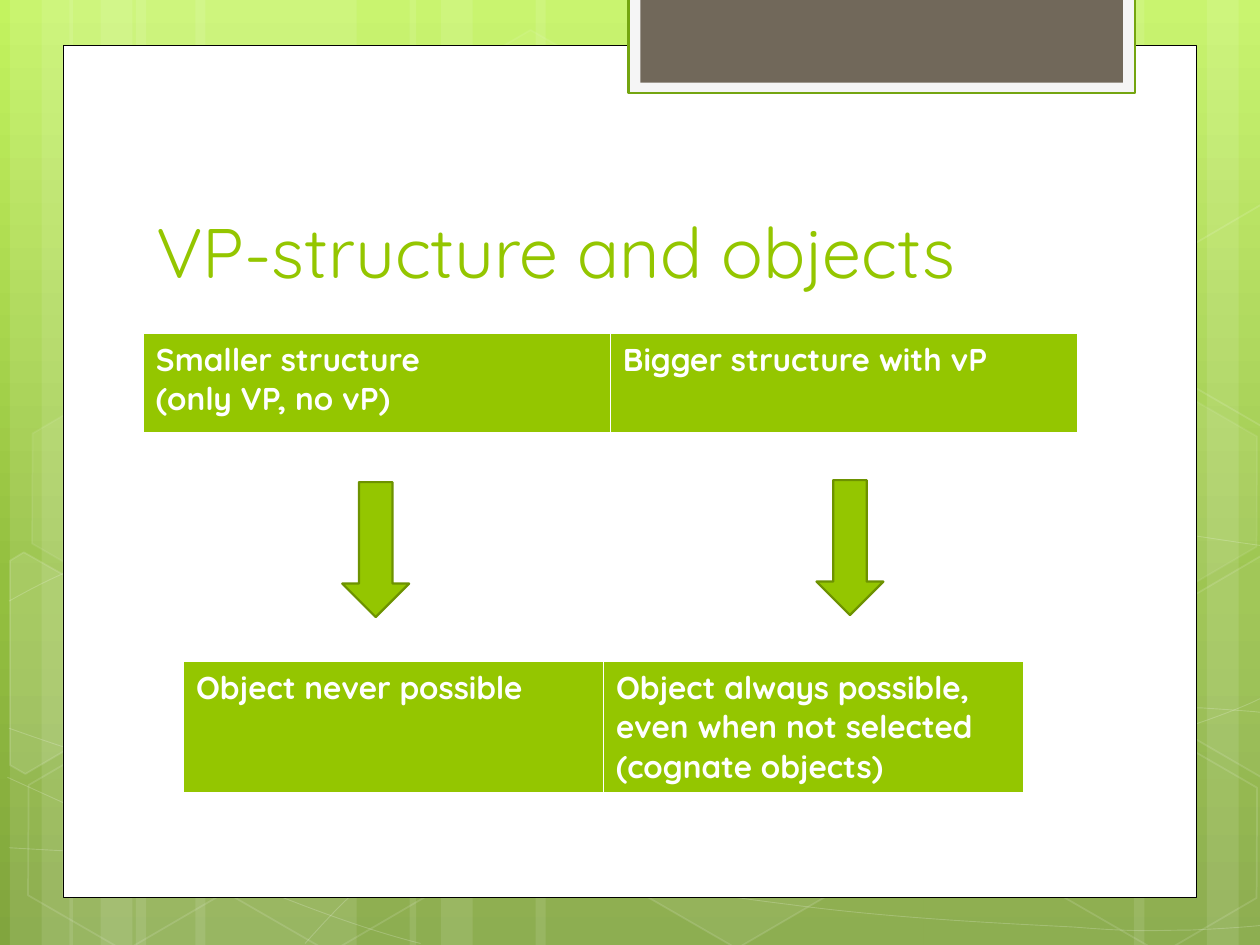
from copy import deepcopy
from dataclasses import dataclass
from math import cos, radians, sin

from lxml.etree import SubElement
from pptx import Presentation
from pptx.dml.color import RGBColor
from pptx.enum.shapes import MSO_SHAPE
from pptx.enum.text import MSO_ANCHOR, MSO_AUTO_SIZE, PP_ALIGN
from pptx.oxml.ns import qn
from pptx.util import Cm, Pt

FONT = "Quicksand"
WHITE = RGBColor(0xFF, 0xFF, 0xFF)
BLACK = RGBColor(0x00, 0x00, 0x00)
GREEN = RGBColor(0x94, 0xC6, 0x00)
DARK_GREEN = RGBColor(0x6D, 0x92, 0x00)
TAB_GREEN = RGBColor(0x74, 0xA5, 0x10)
TAB_LIGHT = RGBColor(0xF5, 0xF5, 0xF5)
TAB_BROWN = RGBColor(0x71, 0x68, 0x5A)
SKY = [(0, RGBColor(0xC3, 0xF3, 0x5F)),
       (0.62, RGBColor(0x93, 0xBF, 0x3F)),
       (1, RGBColor(0x81, 0xA5, 0x3E))]

# Pale decoration, in cm: band widths and the left edges of each cluster
BAND_WIDTHS = (4.45, 1.27, 2.11)
BAND_CLUSTERS = [(2.74, 0.2, 0.84), (3.94, 1.4, 2.03), (18.62, 24.33, 22.86)]
MIDDLE_BANDS = [(10.8, 7.82), (8.26, 1.27), (8.89, 2.11)]

# Each swoosh: start point, then Bezier pieces (two controls and an end)
# or straight pieces (an end only)
SWOOSHES = [
    [(0.18, 17.09), (1.55, 17.17, 2.92, 17.25, 4.83, 17.22),
     (6.73, 17.2, 9.09, 17.15, 11.63, 16.89),
     (14.17, 16.64, 17.78, 16.15, 20.12, 15.67),
     (22.43, 15.19, 24.82, 14.43, 25.58, 13.99)],
    [(0.18, 12.12), (0.91, 11.71, 1.65, 11.33, 3.07, 10.95),
     (4.52, 10.57, 6.58, 10.01, 8.81, 9.83),
     (11.07, 9.65, 13.82, 9.63, 16.61, 9.83),
     (19.41, 10.03, 24.05, 10.82, 25.58, 11.02)],
    [(0.15, 15.67), (3.23, 17.07, 6.27, 18.47, 8.48, 19.02)],
    [(0.18, 14.68), (0.97, 14.96, 1.78, 15.24, 3.25, 15.65),
     (4.72, 16.03, 6.93, 16.66, 9.07, 17.09),
     (11.18, 17.53, 13.84, 17.98, 15.95, 18.24),
     (18.06, 18.52, 20.32, 18.62, 21.67, 18.69),
     (22.99, 18.8, 23.34, 18.75, 24, 18.75),
     (24.66, 18.72, 25.12, 18.69, 25.58, 18.64)],
    [(6.15, 19.02), (6.6, 18.52, 7.06, 18.01, 7.67, 17.55),
     (8.28, 17.09, 9.14, 16.59, 9.86, 16.23),
     (10.57, 15.88, 11, 15.72, 11.94, 15.47),
     (12.85, 15.21, 14.55, 14.86, 15.44, 14.68),
     (16.36, 14.5, 16.48, 14.5, 17.27, 14.45),
     (18.03, 14.38, 19.3, 14.3, 20.17, 14.27),
     (21.06, 14.25, 22.5, 14.27, 22.5, 14.27), (24.21, 14.27),
     (24.66, 14.3, 25.1, 14.33, 25.32, 14.35),
     (25.55, 14.38, 25.48, 14.35, 25.55, 14.38)],
]

# Hexagons: left, top, fill opacity, line opacity (percent)
TILT = 30
HEXAGONS = [(8.48, 0.91, 4, 8), (12.62, 14.96, 6, 12), (0.28, 15.01, 0, 12),
            (0.36, 7.92, 7, 8), (4.42, 15.04, 0, 12), (19.13, 11.51, 10, 12),
            (21.18, 15.06, 0, 12), (21.18, 7.98, 7, 8)]
LEFT_CUT = [(0.2, 11.3), (0.48, 11.13), (2.44, 12.24), (2.41, 14.48),
            (0.51, 15.6), (0.2, 15.42)]
LEFT_CENTER = (0.91, 13.59)
RIGHT_CUT = [(23.52, 12.32), (25.43, 11.2), (25.63, 11.33), (25.63, 15.57),
             (25.45, 15.67), (23.52, 14.55)]
RIGHT_CENTER = (25.02, 13.21)
RIGHT_CUT_RISE = 7.08


@dataclass
class Box:
    """A region of the slide, in cm."""
    left: float
    top: float
    width: float
    height: float

    def lengths(self):
        return [Cm(v) for v in (self.left, self.top, self.width, self.height)]


def write_text(frame, text, size=18, color=WHITE, bold=False):
    frame.text = text
    frame.word_wrap = True
    for paragraph in frame.paragraphs:
        paragraph.alignment = PP_ALIGN.LEFT
        font = paragraph.runs[0].font
        font.name, font.size, font.bold = FONT, Pt(size), bold
        font.color.rgb = color


def paint(shape, fill=None, line=None, weight=1.0, fill_alpha=100, line_alpha=100):
    shape.shadow.inherit = False
    for part, target, color, alpha in (
            ("a:solidFill", shape.fill, fill, fill_alpha),
            ("a:ln/a:solidFill", shape.line.fill, line, line_alpha)):
        if color is None or alpha == 0:
            target.background()
            continue
        target.solid()
        target.fore_color.rgb = color
        if alpha < 100:
            steps = "/".join(qn(step) for step in part.split("/"))
            SubElement(shape._element.spPr.find(steps)[0], qn("a:alpha"),
                       val=str(alpha * 1000))
    if line is not None:
        shape.line.width = Pt(weight)
    return shape


def add_preset(slide, kind, box, **look):
    return paint(slide.shapes.add_shape(kind, *box.lengths()), **look)


def add_outline(slide, points, closed, **look):
    start, *rest = [(Cm(x), Cm(y)) for x, y in points]
    builder = slide.shapes.build_freeform(*start)
    builder.add_line_segments(rest, close=closed)
    return paint(builder.convert_to_shape(), **look)


def add_swoosh(slide, start, *pieces):
    points = [start]
    for piece in pieces:
        points += zip(piece[::2], piece[1::2])
    swoosh = add_outline(slide, points, False, line=WHITE, weight=0.5, line_alpha=20)
    # Merge the three points of each Bezier piece into one curve
    segments = iter(swoosh._element.findall(".//" + qn("a:lnTo")))
    for piece in pieces:
        curve = next(segments)
        if len(piece) == 2:
            continue
        merged = curve.getparent().makeelement(qn("a:cubicBezTo"))
        curve.addprevious(merged)
        for segment in (curve, next(segments), next(segments)):
            merged.append(segment[0])
            segment.getparent().remove(segment)


def add_cut_hexagon(slide, points, center, fill_alpha):
    # Points are turned back about the center, then the shape is tilted
    c, s = cos(radians(TILT)), sin(radians(TILT))
    offsets = [(x - center[0], y - center[1]) for x, y in points]
    level = [(center[0] + x * c + y * s, center[1] - x * s + y * c)
             for x, y in offsets]
    shape = add_outline(slide, level, True, fill=WHITE, line=WHITE,
                        fill_alpha=fill_alpha, line_alpha=12)
    shape.rotation = TILT


def add_backdrop(slide, box):
    # Gradient
    fill = slide.background.fill
    fill.gradient()
    fill.gradient_angle = 270
    stops = slide.element.find(".//" + qn("a:gsLst"))
    stops.append(deepcopy(stops[-1]))
    for stop, (position, color) in zip(fill.gradient_stops, SKY):
        stop.position, stop.color.rgb = position, color

    # Vertical bands
    bands = [band for lefts in BAND_CLUSTERS for band in zip(lefts, BAND_WIDTHS)]
    for left, width in bands + MIDDLE_BANDS:
        band = Box(box.left + left, box.top, width, box.height)
        add_preset(slide, MSO_SHAPE.RECTANGLE, band, fill=WHITE, fill_alpha=10)

    for swoosh in SWOOSHES:
        add_swoosh(slide, *swoosh)

    # Hexagons, whole and cut by the slide edge
    for left, top, fill_alpha, line_alpha in HEXAGONS:
        hexagon = add_preset(slide, MSO_SHAPE.HEXAGON,
                             Box(box.left + left, box.top + top, 4.45, 3.86),
                             fill=WHITE, line=WHITE,
                             fill_alpha=fill_alpha, line_alpha=line_alpha)
        hexagon.adjustments[0] = 0.285
        hexagon.rotation = TILT
    add_cut_hexagon(slide, LEFT_CUT, LEFT_CENTER, 10)
    for rise, fill_alpha in ((0, 4), (RIGHT_CUT_RISE, 0)):
        *points, center = [(x, y - rise) for x, y in RIGHT_CUT + [RIGHT_CENTER]]
        add_cut_hexagon(slide, points, center, fill_alpha)


def add_page(slide, box):
    add_preset(slide, MSO_SHAPE.RECTANGLE, box, fill=WHITE, line=BLACK, weight=0.5)
    # Tab hanging from the top edge
    tab = Box(box.left + 11.4, box.top - 0.96, 10.21, 1.93)
    add_preset(slide, MSO_SHAPE.RECTANGLE, tab, fill=TAB_LIGHT, line=TAB_GREEN,
               weight=1.25)
    inner = Box(tab.left + 0.24, tab.top, 9.73, 1.72)
    add_preset(slide, MSO_SHAPE.RECTANGLE, inner, fill=TAB_BROWN)


def place_title(slide, box, text):
    title = slide.shapes.title
    slide.shapes._spTree.append(title._element)  # in front of the page
    title.left, title.top, title.width, title.height = box.lengths()
    write_text(title.text_frame, text, size=40, color=GREEN)
    title.text_frame.auto_size = MSO_AUTO_SIZE.NONE
    title.text_frame.vertical_anchor = MSO_ANCHOR.BOTTOM


def add_pair(slide, box, texts):
    # The header row of the table style draws the white borders
    table = slide.shapes.add_table(1, len(texts), *box.lengths()).table
    for cell, text in zip(table.iter_cells(), texts):
        write_text(cell.text_frame, text, bold=True)
        cell.fill.solid()
        cell.fill.fore_color.rgb = GREEN


def main():
    deck = Presentation()
    deck.slide_width, deck.slide_height = Cm(25.4), Cm(19.05)
    slide = deck.slides.add_slide(deck.slide_layouts[5])
    add_backdrop(slide, Box(0, 0, 25.4, 19.05))
    add_page(slide, Box(1.27, 0.91, 22.86, 17.18))
    place_title(slide, Box(2.9, 2.84, 19.51, 3.18), "VP-structure and objects")
    # Structures lead down to what they allow
    add_pair(slide, Box(2.89, 6.72, 18.83, 2),
             ["Smaller structure\n(only VP, no vP)", "Bigger structure with vP"])
    for left, top in ((6.9, 9.72), (16.46, 9.68)):
        add_preset(slide, MSO_SHAPE.DOWN_ARROW, Box(left, top, 1.35, 2.72),
                   fill=GREEN, line=DARK_GREEN, weight=1.25)
    add_pair(slide, Box(3.7, 13.33, 16.93, 2.54),
             ["Object never possible",
              "Object always possible, even when not selected (cognate objects)"])
    deck.save("out.pptx")


if __name__ == "__main__":
    main()
